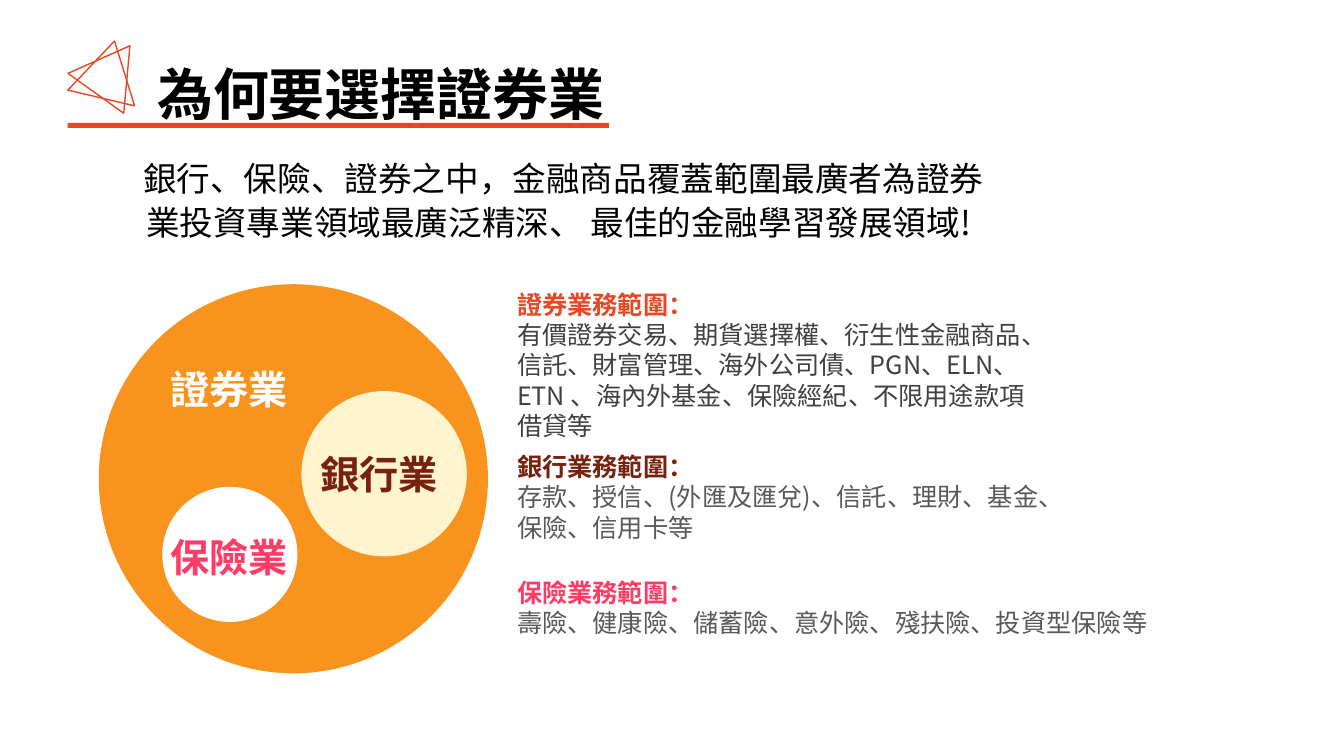
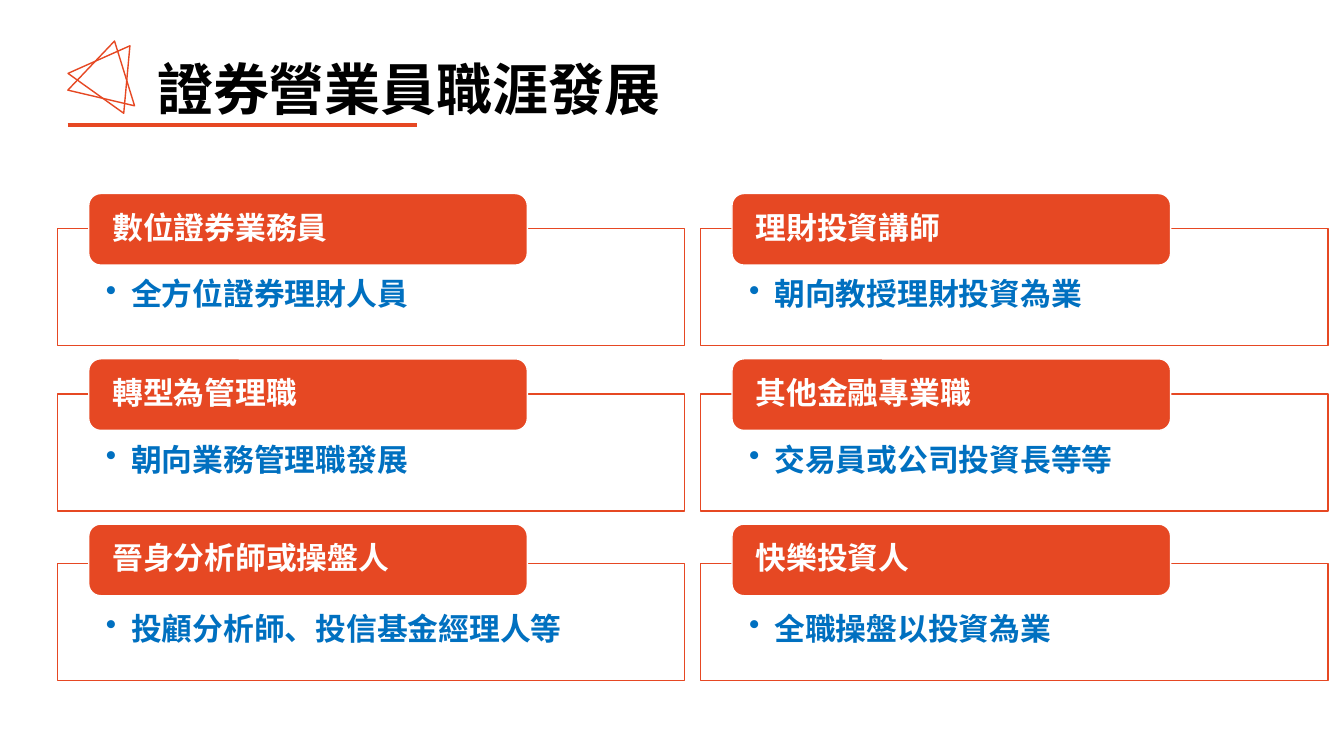
from lxml.etree import SubElement
from pptx import Presentation
from pptx.dml.color import RGBColor
from pptx.enum.shapes import MSO_CONNECTOR, MSO_SHAPE
from pptx.enum.text import MSO_ANCHOR
from pptx.oxml.ns import qn
from pptx.util import Inches, Pt

RECT = MSO_SHAPE.RECTANGLE
ROUND = MSO_SHAPE.ROUNDED_RECTANGLE
OVAL = MSO_SHAPE.OVAL
TRI = MSO_SHAPE.ISOSCELES_TRIANGLE
LINE = MSO_CONNECTOR.STRAIGHT
TOP, MID = MSO_ANCHOR.TOP, MSO_ANCHOR.MIDDLE

FONT = "Noto Sans CJK SC"
RED, ORANGE, CREAM = "E64823", "F8931D", "FFF4CE"
BROWN, PINK, BLUE = "77220E", "FD3D66", "0070C0"
WHITE, BLACK, DARK, GRAY = "FFFFFF", "000000", "404040", "595959"


def rgb(code):
    return RGBColor.from_string(code)


def write(frame, *lines, size=18, bold=False, pad=(0.1, 0.05, 0.1, 0.05),
          anchor=TOP, space=None, left=0, first=0, bullet=None):
    frame.word_wrap = True
    frame.vertical_anchor = anchor
    (frame.margin_left, frame.margin_top,
     frame.margin_right, frame.margin_bottom) = map(Inches, pad)
    for i, (text, color, *heavy) in enumerate(lines):
        para = frame.add_paragraph() if i else frame.paragraphs[0]
        props = para._p.get_or_add_pPr()
        if left:
            props.set("marL", str(Inches(left)))
            props.set("indent", str(Inches(first)))
        if bullet:
            SubElement(props, qn("a:buChar")).set("char", bullet)
        props.set("algn", "l")
        if space:
            para.line_spacing = space
        run = para.add_run()
        run.text = text
        font = run.font
        font.name, font.size = FONT, Pt(size)
        font.bold = heavy[0] if heavy else bold
        font.color.rgb = rgb(color)
        east = SubElement(run._r.get_or_add_rPr(), qn("a:ea"))
        east.set("typeface", FONT)


class Deck:
    def __init__(self):
        self.file = Presentation()
        self.file.slide_width = Inches(13.33)
        self.file.slide_height = Inches(7.5)

    def page(self):
        self.slide = self.file.slides.add_slide(self.file.slide_layouts[6])
        for x, turn in ((0.78, 35.6), (0.73, 13.2)):
            self.shape(TRI, x, 0.4, 0.68, 0.58, line=RED).rotation = turn
        self.rule(0.67, 4.14, 1.24)

    def shape(self, kind, x, y, w, h, fill=None, line=None):
        item = self.slide.shapes.add_shape(kind, *map(Inches, (x, y, w, h)))
        item.shadow.inherit = False
        if fill:
            item.fill.solid()
            item.fill.fore_color.rgb = rgb(fill)
        else:
            item.fill.background()
        if line:
            item.line.color.rgb = rgb(line)
            item.line.width = Pt(1)
        else:
            item.line.fill.background()
        return item

    def rule(self, start, end, y):
        item = self.slide.shapes.add_connector(
            LINE, *map(Inches, (start, y, end, y)))
        item.line.color.rgb = rgb(RED)
        item.line.width = Pt(3)
        SubElement(item._element.spPr, qn("a:effectLst"))

    def text(self, x, y, w, h, *lines, **style):
        box = self.slide.shapes.add_textbox(*map(Inches, (x, y, w, h)))
        write(box.text_frame, *lines, **style)

    def title(self, text, y, w, h, space=None):
        self.text(1.46, y, w, h, (text, BLACK), size=40, bold=True,
                  space=space)

    def card(self, x, top, base, head, body):
        panel = self.shape(RECT, x, base, 6.22, 1.16, WHITE, RED)
        write(panel.text_frame, (body, BLUE), size=22, bold=True,
              pad=(0.48, 0.5, 0.48, 0.17), space=0.9,
              left=0.25, first=-0.25, bullet="•")
        tab = self.shape(ROUND, x + 0.31, top, 4.35, 0.71, RED, WHITE)
        write(tab.text_frame, (head, WHITE), size=22, bold=True,
              pad=(0.2, 0, 0.2, 0), anchor=MID, space=0.9)


def scope(deck):
    deck.page()
    deck.title("為何要選擇證券業", 0.54, 4.87, 0.77)
    deck.shape(RECT, 0.67, 1.22, 5.37, 0.05, RED)
    deck.text(0.93, 1.48, 9.09, 1.05,
              ("銀行、保險、證券之中，金融商品覆蓋範圍最廣者為證券業投資專業領域"
               "最廣泛精深、 最佳的金融學習發展領域!", BLACK),
              size=24, space=1.09, left=0.42, first=-0.03)
    for y, w, h, head, color, body, tone in (
        (4.43, 5.69, 1.62, "銀行業務範圍：", BROWN,
         "存款、授信、(外匯及匯兌)、信託、理財、基金、保險、信用卡等", GRAY),
        (5.68, 6.89, 1.01, "保險業務範圍：", PINK,
         "壽險、健康險、儲蓄險、意外險、殘扶險、投資型保險等", GRAY),
        (2.82, 5.32, 1.31, "證券業務範圍：", RED,
         "有價證券交易、期貨選擇權、衍生性金融商品、信託、財富管理、"
         "海外公司債、PGN、ELN、ETN 、海內外基金、保險經紀、"
         "不限用途款項借貸等", DARK),
    ):
        deck.text(5.03, y, w, h, (head, color, True), (body, tone))
    for x, y, size, fill in ((0.98, 2.82, 3.86, ORANGE),
                             (1.61, 4.83, 1.34, WHITE),
                             (2.99, 3.88, 1.64, CREAM)):
        deck.shape(OVAL, x, y, size, size, fill)
    for x, y, name, color in ((1.59, 3.58, "證券業", WHITE),
                              (3.08, 4.42, "銀行業", BROWN),
                              (1.59, 5.24, "保險業", PINK)):
        deck.text(x, y, 1.51, 0.43, (name, color), size=28, bold=True)


def career(deck):
    deck.page()
    cols = (
        (("數位證券業務員", "全方位證券理財人員"),
         ("轉型為管理職", "朝向業務管理職發展"),
         ("晉身分析師或操盤人", "投顧分析師、投信基金經理人等")),
        (("理財投資講師", "朝向教授理財投資為業"),
         ("其他金融專業職", "交易員或公司投資長等等"),
         ("快樂投資人", "全職操盤以投資為業")),
    )
    for col, cards in enumerate(cols):
        for row, (base, card) in enumerate(zip((2.27, 3.91, 5.59), cards)):
            deck.card(0.57 + 6.38 * col, 1.92 + 1.64 * row, base, *card)
    deck.title("證券營業員職涯發展", 0.57, 5.33, 0.71, space=0.9)


def main():
    deck = Deck()
    scope(deck)
    career(deck)
    deck.file.save("out.pptx")


if __name__ == "__main__":
    main()
